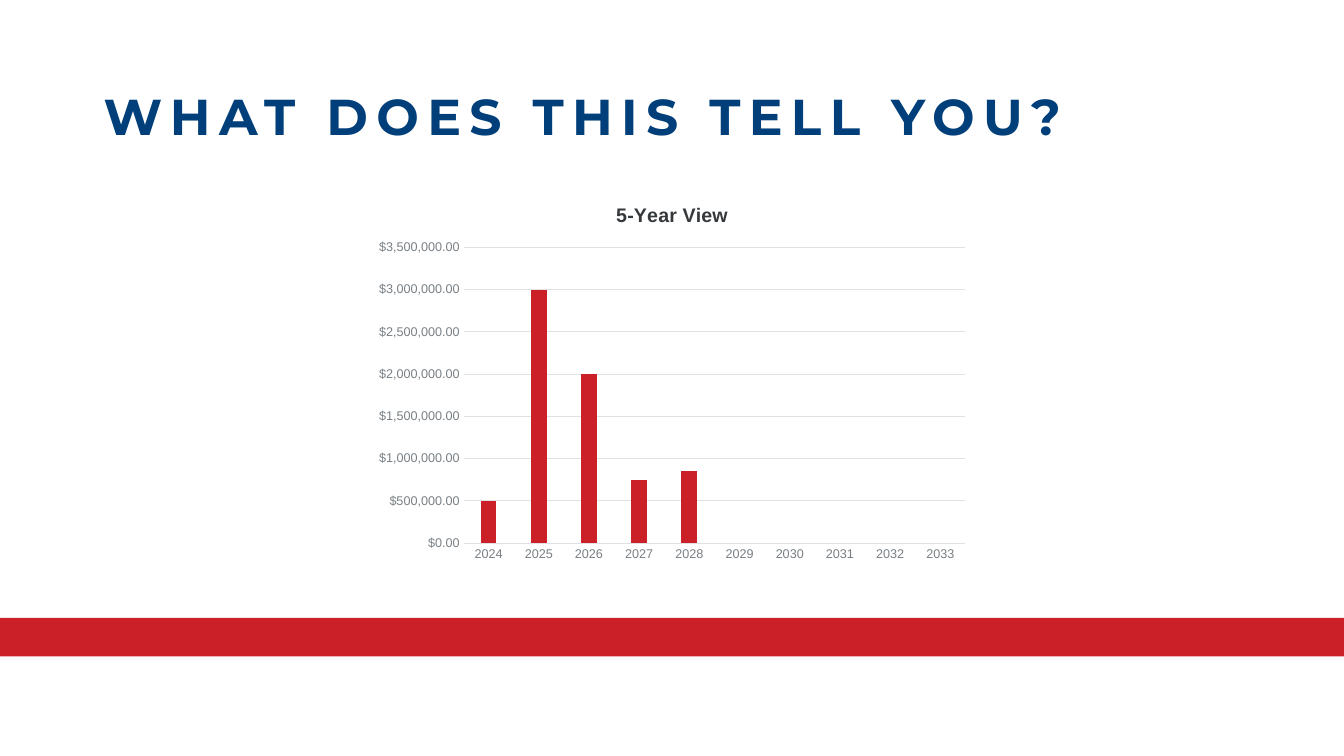
import pptx
import pptx.chart.data
import pptx.dml.color
import pptx.enum.chart
import pptx.enum.shapes
import pptx.enum.text
import pptx.util

Pt = pptx.util.Pt
RED = "CB2027"
NAVY = "013F7A"
DARK = "36393B"
GREY = "787F84"
RULE = "E0E1E3"


def color(value):
    return pptx.dml.color.RGBColor.from_string(value)


class SlideBuilder:
    heading_font = "Montserrat"
    chart_font = "Arial"

    def __init__(self, page):
        self.page = page

    def style_font(self, font, name, size, shade, bold=False):
        font.name = name
        font.size = Pt(size)
        font.bold = bold
        font.color.rgb = color(shade)

    def style_rule(self, line):
        line.color.rgb = color(RULE)
        line.width = Pt(0.75)

    def band(self, left, top, width, height, fill):
        shape = self.page.shapes.add_shape(
            pptx.enum.shapes.MSO_SHAPE.RECTANGLE,
            Pt(left), Pt(top), Pt(width), Pt(height))
        shape.shadow.inherit = False
        shape.fill.solid()
        shape.fill.fore_color.rgb = color(fill)
        shape.line.fill.background()

    def heading(self, left, top, width, height, text):
        box = self.page.shapes.add_textbox(Pt(left), Pt(top), Pt(width), Pt(height))
        frame = box.text_frame
        frame.word_wrap = True
        frame.vertical_anchor = pptx.enum.text.MSO_ANCHOR.MIDDLE
        para = frame.paragraphs[0]
        para.line_spacing = 0.9
        span = para.add_run()
        span.text = text
        self.style_font(span.font, self.heading_font, 36, NAVY, True)
        span.font._element.set("spc", "600")

    def column_chart(self, left, top, width, height, title, years, amounts):
        money = '"$"#,##0.00'
        data = pptx.chart.data.CategoryChartData(number_format=money)
        data.categories = years
        data.add_series("Series 1", amounts)
        chart = self.page.shapes.add_chart(
            pptx.enum.chart.XL_CHART_TYPE.COLUMN_CLUSTERED,
            Pt(left), Pt(top), Pt(width), Pt(height), data).chart
        self.style_font(chart.font, self.chart_font, 10, DARK)
        chart.has_legend = False
        chart.has_title = True
        span = chart.chart_title.text_frame.paragraphs[0].add_run()
        span.text = title
        self.style_font(span.font, self.chart_font, 14, DARK, True)
        chart.chart_title.include_in_layout = False

        plot = chart.plots[0]
        plot.vary_by_categories = False
        plot.gap_width = 219
        plot.overlap = -27
        series = plot.series[0]
        series.invert_if_negative = False
        series.format.fill.solid()
        series.format.fill.fore_color.rgb = color(RED)

        for axis in (chart.category_axis, chart.value_axis):
            axis.major_tick_mark = pptx.enum.chart.XL_TICK_MARK.NONE
            axis.minor_tick_mark = pptx.enum.chart.XL_TICK_MARK.NONE
            self.style_font(axis.tick_labels.font, self.chart_font, 9, GREY)
        self.style_rule(chart.category_axis.format.line)
        amount_axis = chart.value_axis
        amount_axis.format.line.fill.background()
        amount_axis.minimum_scale = 0
        amount_axis.maximum_scale = 3500000
        amount_axis.major_unit = 500000
        amount_axis.tick_labels.number_format = money
        amount_axis.tick_labels.number_format_is_linked = False
        amount_axis.has_major_gridlines = True
        self.style_rule(amount_axis.major_gridlines.format.line)


def main():
    deck = pptx.Presentation()
    deck.slide_width = Pt(960)
    deck.slide_height = Pt(540)
    builder = SlideBuilder(deck.slides.add_slide(deck.slide_layouts[6]))

    builder.band(0, 441.4, 960, 27.4, RED)
    builder.heading(67, 59.8, 797, 51, "WHAT DOES THIS TELL YOU?")
    years = [str(year) for year in range(2024, 2034)]
    amounts = [500000, 3000000, 2000000, 750000, 850000]
    amounts += [None] * (len(years) - len(amounts))
    builder.column_chart(262, 132.5, 436.3, 274.3, "5-Year View", years, amounts)

    deck.save("out.pptx")


if __name__ == "__main__":
    main()
